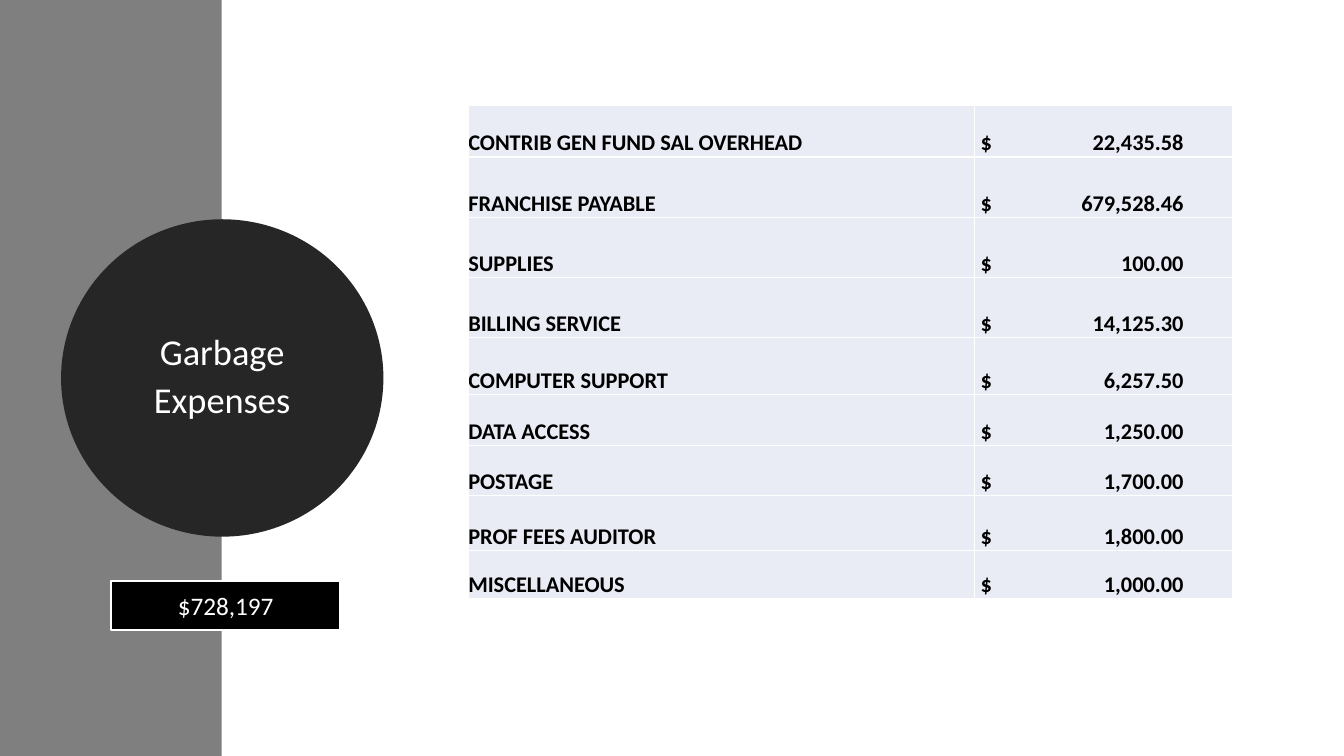
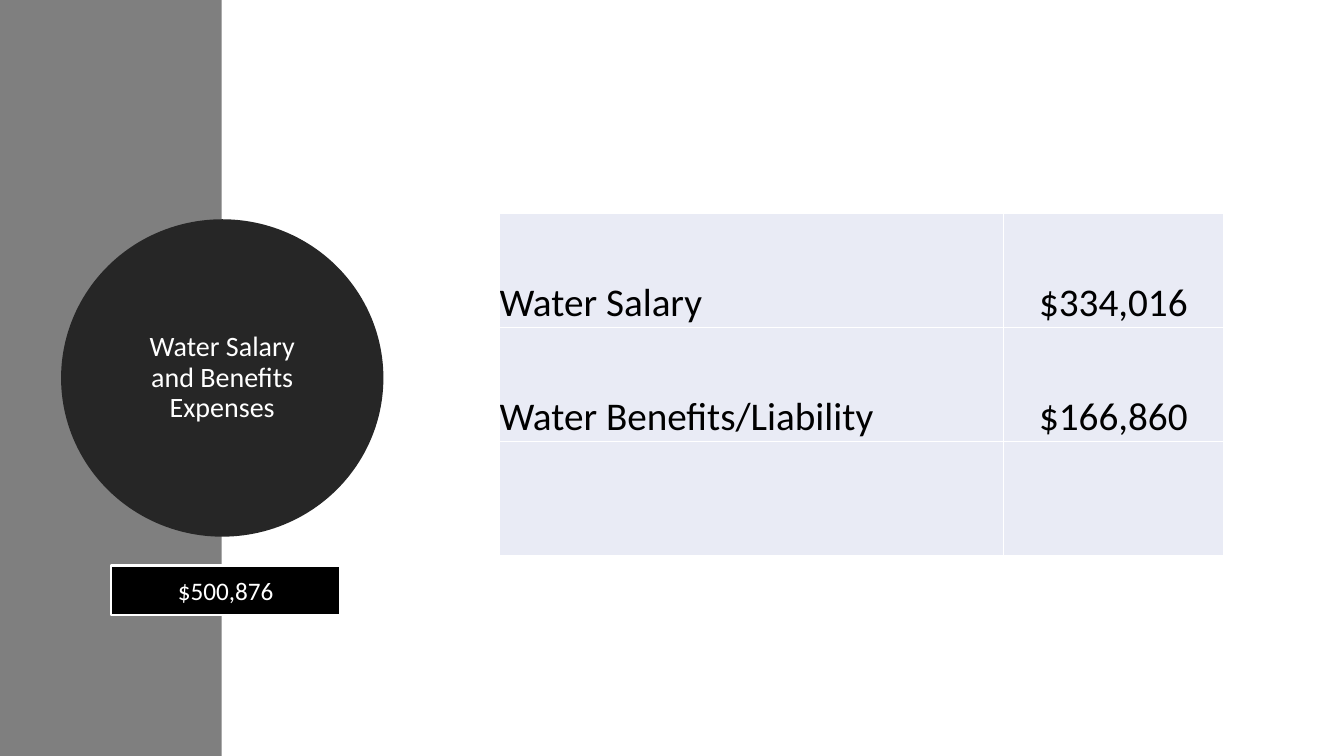
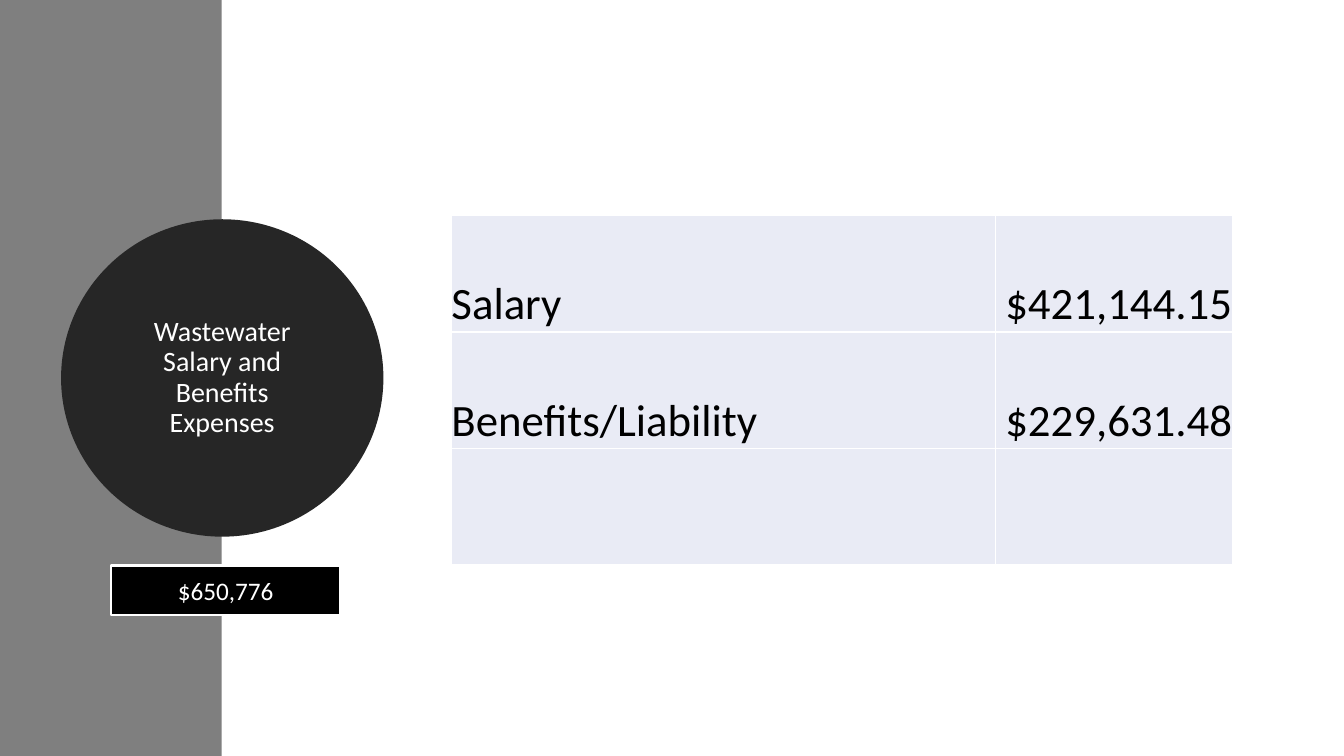
from lxml import etree
from pptx import Presentation
from pptx.dml.color import RGBColor
from pptx.enum import shapes, text
from pptx.oxml.ns import qn
from pptx.util import Pt

FONT = "Calibri"
COLOURS = {
    "band": "7F7F7F",
    "circle": "262626",
    "badge": "000000",
    "cell": "E9EBF5",
    "light": "FFFFFF",
    "dark": "000000",
}
PAGE_WIDTH, PAGE_HEIGHT = 960, 540
BAND = (0, 0, 158.4, PAGE_HEIGHT)
CIRCLE = (50.5, 163.5, 216.5, 213)
BADGE_SIZE = (164, 35.3)
BADGE_LEFT = 79.2
AMOUNT_TAB = 145

GARBAGE_ROWS = [
    ("CONTRIB GEN FUND SAL OVERHEAD", "$\t22,435.58"),
    ("FRANCHISE PAYABLE", "$\t679,528.46"),
    ("SUPPLIES", "$\t100.00"),
    ("BILLING SERVICE", "$\t14,125.30"),
    ("COMPUTER SUPPORT", "$\t6,257.50"),
    ("DATA ACCESS", "$\t1,250.00"),
    ("POSTAGE", "$\t1,700.00"),
    ("PROF FEES AUDITOR", "$\t1,800.00"),
    ("MISCELLANEOUS", "$\t1,000.00"),
]
WATER_ROWS = [
    ("Water Salary", "$334,016"),
    ("Water Benefits/Liability", "$166,860"),
    ("", ""),
]
WASTEWATER_ROWS = [
    ("Salary", "$421,144.15"),
    ("Benefits/Liability", "$229,631.48"),
    ("", ""),
]


def colour(name):
    """Return the named colour of the palette."""
    return RGBColor.from_string(COLOURS[name])


def style_text(frame, size, ink, align, bold=False):
    """Format every paragraph and run of a text frame."""
    for para in frame.paragraphs:
        para.alignment = align
        for span in para.runs:
            span.font.name = FONT
            span.font.size = Pt(size)
            span.font.bold = bold
            span.font.color.rgb = colour(ink)


def add_block(page, kind, box, fill, line=None, line_width=0):
    """Add a flat filled shape in the given box."""
    block = page.shapes.add_shape(kind, *map(Pt, box))
    block.shadow.inherit = False
    block.fill.solid()
    block.fill.fore_color.rgb = colour(fill)
    if line:
        block.line.color.rgb = colour(line)
        block.line.width = Pt(line_width)
    else:
        block.line.fill.background()
    return block


def add_title_panel(page, title, size):
    """Add the side band and the circle that holds the title."""
    add_block(page, shapes.MSO_SHAPE.RECTANGLE, BAND, "band")
    circle = add_block(page, shapes.MSO_SHAPE.OVAL, CIRCLE, "circle", "circle", 13.75)
    frame = circle.text_frame
    frame.text = title
    frame.word_wrap = True
    frame.margin_left = frame.margin_right = Pt(14.4)
    frame.vertical_anchor = text.MSO_ANCHOR.MIDDLE
    style_text(frame, size, "light", text.PP_ALIGN.CENTER)
    for para in frame.paragraphs:
        para.line_spacing = 0.9
        para.space_after = Pt(6)


def add_total_badge(page, total, top):
    """Add the black badge with the total amount."""
    box = (BADGE_LEFT, top, *BADGE_SIZE)
    badge = add_block(page, shapes.MSO_SHAPE.RECTANGLE, box, "badge", "light", 1.5)
    badge.text_frame.text = total
    badge.text_frame.vertical_anchor = text.MSO_ANCHOR.MIDDLE
    style_text(badge.text_frame, 18, "light", text.PP_ALIGN.CENTER)


def add_borders(cell):
    """Draw a thin light line on all sides of a cell."""
    properties = cell._tc.get_or_add_tcPr()
    for side in ("a:lnL", "a:lnR", "a:lnT", "a:lnB"):
        line = etree.SubElement(properties, qn(side), w=str(Pt(1)))
        fill = etree.SubElement(line, qn("a:solidFill"))
        etree.SubElement(fill, qn("a:srgbClr"), val=COLOURS["light"])


def add_right_tab(para, position):
    """Give a paragraph one right-aligned tab stop."""
    stops = etree.SubElement(para._p.get_or_add_pPr(), qn("a:tabLst"))
    etree.SubElement(stops, qn("a:tab"), pos=str(Pt(position)), algn="r")


def add_expense_table(page, origin, widths, heights, rows, size, align, bold=False):
    """Add a two-column table of expense names and amounts."""
    box = (*origin, sum(widths), sum(heights))
    frame = page.shapes.add_table(len(rows), len(widths), *map(Pt, box))
    table = frame.table
    table.first_row = table.horz_banding = False
    for column, width in zip(table.columns, widths):
        column.width = Pt(width)
    for row, height, values in zip(table.rows, heights, rows):
        row.height = Pt(height)
        for cell, value, side in zip(row.cells, values, (text.PP_ALIGN.LEFT, align)):
            cell.margin_left = cell.margin_right = Pt(0)
            cell.margin_top = cell.margin_bottom = Pt(0)
            cell.vertical_anchor = text.MSO_ANCHOR.BOTTOM
            add_borders(cell)
            cell.fill.solid()
            cell.fill.fore_color.rgb = colour("cell")
            cell.text_frame.text = value
            style_text(cell.text_frame, size, "dark", side, bold)
            if "\t" in value:
                cell.margin_left = Pt(4.5)
                add_right_tab(cell.text_frame.paragraphs[0], AMOUNT_TAB)


def add_expense_page(deck, title, title_size, total, badge_top, **table):
    """Add one slide with title panel, total and expense table."""
    page = deck.slides.add_slide(deck.slide_layouts[6])
    add_title_panel(page, title, title_size)
    add_total_badge(page, total, badge_top)
    add_expense_table(page, **table)


def main():
    """Build and save the deck."""
    deck = Presentation()
    deck.slide_width, deck.slide_height = Pt(PAGE_WIDTH), Pt(PAGE_HEIGHT)
    add_expense_page(
        deck, "Garbage\nExpenses", 26, "$728,197", 414.7,
        origin=(334.5, 75.6), widths=(361.5, 184.5),
        heights=(36.5, 43.5, 42.8, 43, 40.5, 36.3, 36, 39.3, 34.3),
        rows=GARBAGE_ROWS, size=16, align=text.PP_ALIGN.LEFT, bold=True,
    )
    add_expense_page(
        deck, "Water Salary and Benefits Expenses", 20, "$500,876", 403.9,
        origin=(356.8, 152.6), widths=(360, 157), heights=[81.4] * 3,
        rows=WATER_ROWS, size=28, align=text.PP_ALIGN.CENTER,
    )
    add_expense_page(
        deck, "Wastewater Salary and Benefits Expenses", 20, "$650,776", 403.9,
        origin=(322.5, 154), widths=(388.5, 169.3), heights=[83.2] * 3,
        rows=WASTEWATER_ROWS, size=32, align=text.PP_ALIGN.RIGHT,
    )
    deck.save("out.pptx")


if __name__ == "__main__":
    main()
